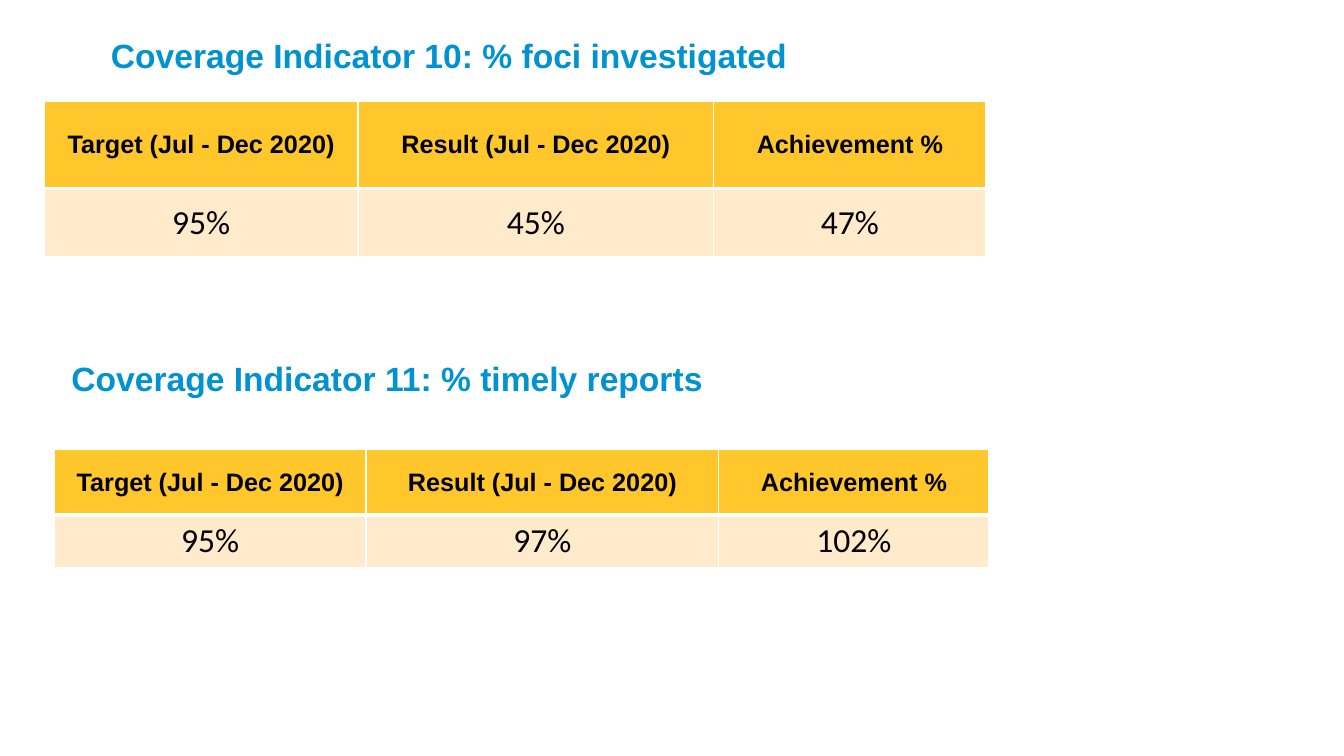
from dataclasses import dataclass

import pptx
import pptx.dml.color
import pptx.enum.text
import pptx.oxml
import pptx.oxml.ns
import pptx.util
from pptx.util import Inches


@dataclass(frozen=True)
class Theme:
    blue: str = "0092D1"
    gold: str = "FFC72C"
    cream: str = "FFEBCB"
    black: str = "000000"
    white: str = "FFFFFF"
    head_font: str = "Arial"
    body_font: str = "Calibri"
    large: int = 24
    small: int = 18
    thin: int = 1
    thick: int = 3


THEME = Theme()
ANCHOR = pptx.enum.text.MSO_ANCHOR
ALIGN = pptx.enum.text.PP_ALIGN
HEADS = ("Target (Jul - Dec 2020)", "Result (Jul - Dec 2020)", "Achievement %")


def rgb(code):
    return pptx.dml.color.RGBColor.from_string(code)


def style(para, font, size, color, bold):
    for run in para.runs:
        run.font.name = font
        run.font.size = pptx.util.Pt(size)
        run.font.color.rgb = rgb(color)
        run.font.bold = bold


def add_title(slide, text, area, inset, anchor):
    box = slide.shapes.add_textbox(*map(Inches, area))
    frame = box.text_frame
    frame.word_wrap = True
    frame.vertical_anchor = anchor
    frame.margin_left = frame.margin_right = Inches(inset)
    frame.margin_top = frame.margin_bottom = Inches(inset)
    frame.text = text
    style(frame.paragraphs[0], THEME.head_font, THEME.large, THEME.blue, True)


def set_edges(cell, widths):
    """Draw white cell borders; widths are for left, right, top and bottom."""
    props = cell._tc.get_or_add_tcPr()
    for spot, (side, width) in enumerate(zip("LRTB", widths)):
        line = pptx.oxml.parse_xml(
            f'<a:ln{side} {pptx.oxml.ns.nsdecls("a")} w="{pptx.util.Pt(width)}">'
            f'<a:solidFill><a:srgbClr val="{THEME.white}"/></a:solidFill></a:ln{side}>'
        )
        props.insert(spot, line)


def fill_cell(cell, text, is_head):
    cell.fill.solid()
    cell.fill.fore_color.rgb = rgb(THEME.gold if is_head else THEME.cream)
    cell.vertical_anchor = ANCHOR.MIDDLE
    thin, thick = THEME.thin, THEME.thick
    set_edges(cell, (thin, thin, thin, thick) if is_head else (thin, thin, thick, thin))
    para = cell.text_frame.paragraphs[0]
    para.text = text
    para.alignment = ALIGN.CENTER
    if is_head:
        style(para, THEME.head_font, THEME.small, THEME.black, True)
    else:
        style(para, THEME.body_font, THEME.large, THEME.black, False)


def add_scores(slide, left, top, widths, heights, scores):
    rows = (HEADS, scores)
    area = map(Inches, (left, top, sum(widths), sum(heights)))
    table = slide.shapes.add_table(len(rows), len(HEADS), *area).table
    for col, width in zip(table.columns, widths):
        col.width = Inches(width)
    for index, (row, height) in enumerate(zip(table.rows, heights)):
        row.height = Inches(height)
        for cell, text in zip(row.cells, rows[index]):
            fill_cell(cell, text, index == 0)


def main():
    deck = pptx.Presentation()
    deck.slide_width, deck.slide_height = Inches(13.33), Inches(7.5)
    slide = deck.slides.add_slide(deck.slide_layouts[6])
    add_title(slide, "Coverage Indicator 10: % foci investigated",
              (1.1, 0.11, 11.23, 0.87), 0, ANCHOR.MIDDLE)
    add_scores(slide, 0.44, 1.01, (3.11, 3.53, 2.7), (0.86, 0.68),
               ("95%", "45%", "47%"))
    add_scores(slide, 0.54, 4.46, (3.09, 3.5, 2.68), (0.65, 0.52),
               ("95%", "97%", "102%"))
    add_title(slide, "Coverage Indicator 11: % timely reports",
              (0.61, 3.45, 12.22, 0.61), 0.1, ANCHOR.TOP)
    deck.save("out.pptx")


if __name__ == "__main__":
    main()
